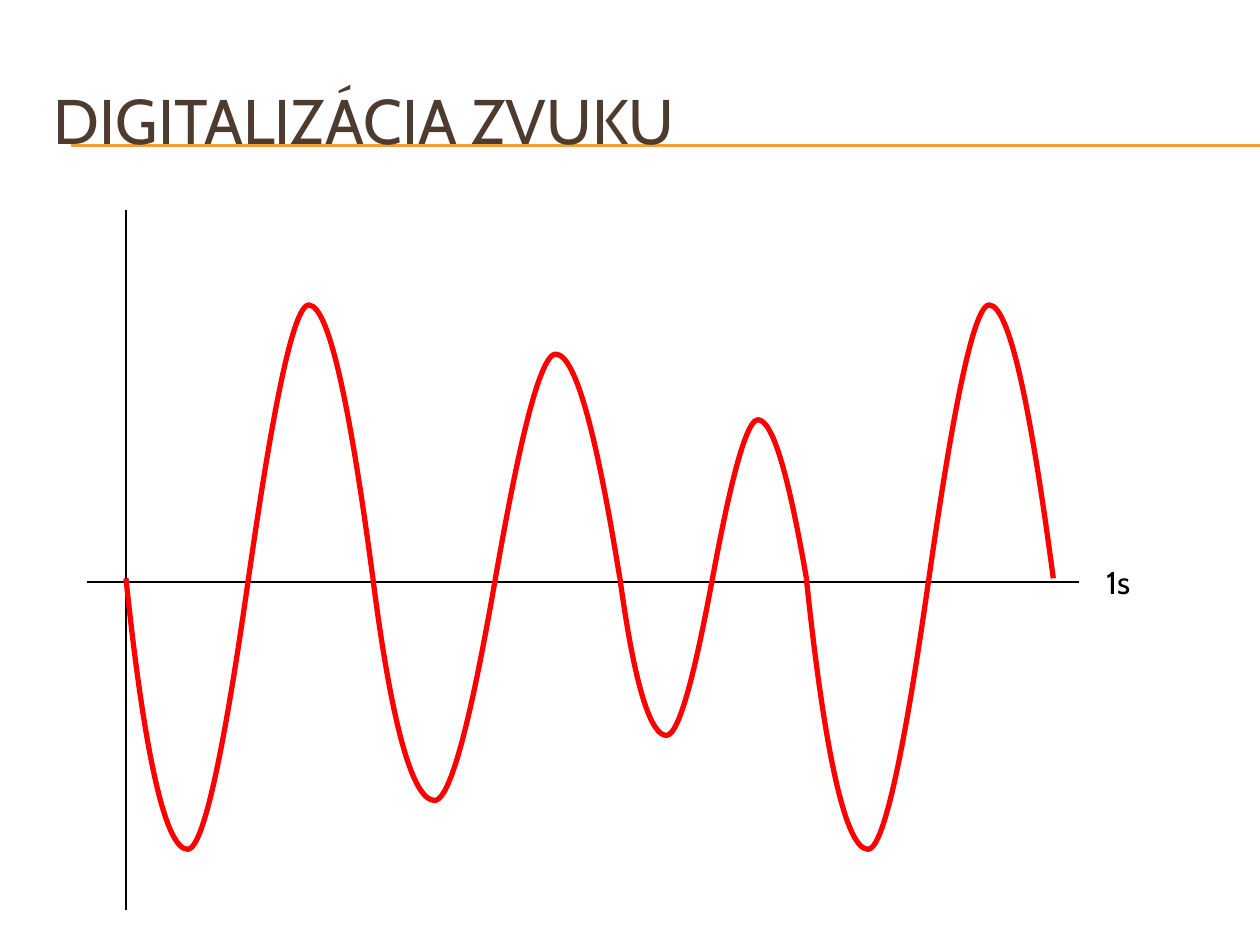
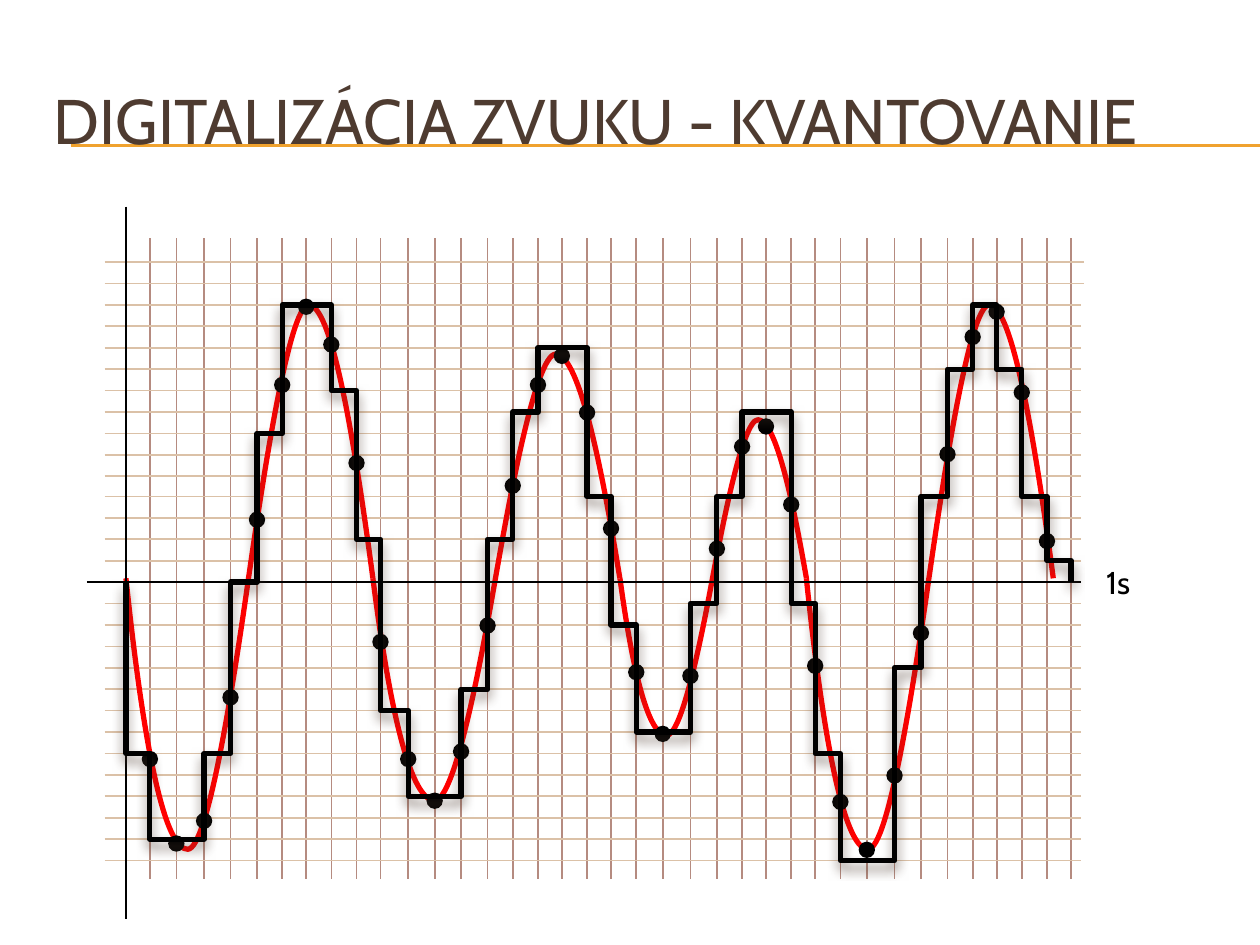
from itertools import accumulate

from lxml.etree import SubElement
from pptx import Presentation
from pptx.dml.color import RGBColor
from pptx.enum.shapes import MSO_CONNECTOR, MSO_SHAPE
from pptx.enum.text import MSO_ANCHOR, MSO_AUTO_SIZE
from pptx.oxml.ns import qn
from pptx.util import Emu, Pt

EMU_PER_PX = 9144
FONT = "Cabin"
BLACK = "000000"
BROWN = "4E3B30"
ORANGE = "F0A22E"
RED = "FF0000"
COLUMN_LINE = "B58B80"
ROW_LINE = "DBC1A7"

AXIS_Y = 462
AXIS_X = 100
WAVE_Y = 459
WAVE_WIDTH = 196
WAVE_CURVE = [
    (0, 0), (16, 153), (33, 215), (49, 215), (65, 215), (85, 86), (97, 2),
    (108, -74), (129, -216), (145, -217), (162, -217), (179, -128), (196, 0),
]
WAVES = [(196, 1), (196, 0.82), (148, 0.58), (196, 1)]

WIDE, NARROW = 21.3, 19.6
COLUMN_STEPS = (
    [WIDE] * 4 + [NARROW] * 5 + [WIDE] * 4 + [NARROW] * 6
    + [WIDE] * 3 + [NARROW] * 5 + [WIDE] * 4 + [NARROW] * 5
)
COLUMNS = [round(x) for x in accumulate(COLUMN_STEPS, initial=119)]
ROWS = [round(208 + 16.95 * index) for index in range(29)]
AXIS_ROW = 15

DOT_SIZE = 13
DOT_TOPS = [
    596, 663, 645, 547, 406, 299, 237, 267, 361, 503, 596, 629,
    590, 490, 379, 299, 276, 321, 413, 527, 576, 530, 429, 348,
    332, 394, 522, 630, 668, 609, 496, 354, 261, 241, 305, 423,
]
QUANTIZED_ROWS = [
    23, 27, 27, 23, 15, 8, 2, 2, 6, 13, 21, 25, 25, 20, 13, 7, 4, 4, 11,
    17, 22, 22, 16, 11, 7, 7, 16, 23, 28, 28, 19, 11, 5, 2, 5, 11, 14,
]


def px(length):
    return Emu(round(length * EMU_PER_PX))


def color(value):
    return RGBColor.from_string(value)


def add_line(slide, start, end, line_color, width=1):
    line = slide.shapes.add_connector(
        MSO_CONNECTOR.STRAIGHT, *(px(value) for value in start + end)
    )
    line.line.color.rgb = color(line_color)
    line.line.width = Pt(width)
    SubElement(line._element.spPr, qn("a:effectLst"))


def add_text(slide, box, text, size, text_color, wrap=True):
    shape = slide.shapes.add_textbox(*(px(value) for value in box))
    frame = shape.text_frame
    frame.word_wrap = wrap
    frame.auto_size = MSO_AUTO_SIZE.NONE if wrap else MSO_AUTO_SIZE.SHAPE_TO_FIT_TEXT
    frame.vertical_anchor = MSO_ANCHOR.MIDDLE if wrap else MSO_ANCHOR.TOP
    run = frame.paragraphs[0].add_run()
    run.text = text
    run.font.name = FONT
    run.font.size = Pt(size)
    run.font.color.rgb = color(text_color)


def add_outline(slide, points, line_color):
    start, *rest = [(px(x), px(y)) for x, y in points]
    builder = slide.shapes.build_freeform(*start)
    builder.add_line_segments(rest, close=False)
    shape = builder.convert_to_shape()
    shape.shadow.inherit = False
    shape.fill.background()
    shape.line.color.rgb = color(line_color)
    shape.line.width = Pt(3)
    return shape


def turn_lines_into_curves(shape):
    lines = list(shape._element.iter(qn("a:lnTo")))
    outline = lines[0].getparent()
    for first in range(0, len(lines), 3):
        curve = SubElement(outline, qn("a:cubicBezTo"))
        for line in lines[first:first + 3]:
            curve.append(line[0])
            outline.remove(line)


def add_waves(slide):
    left = AXIS_X
    for width, amplitude in WAVES:
        points = [
            (left + x * width / WAVE_WIDTH, WAVE_Y + y * amplitude)
            for x, y in WAVE_CURVE
        ]
        turn_lines_into_curves(add_outline(slide, points, RED))
        left += width


def add_axes(slide, right, top, bottom):
    add_line(slide, (69, AXIS_Y), (right, AXIS_Y), BLACK)
    add_line(slide, (AXIS_X, top), (AXIS_X, bottom), BLACK)


def add_time_label(slide):
    add_text(slide, (868, 442, 43, 40), "1s", 18, BLACK, wrap=False)


def add_grid(slide):
    for x in COLUMNS:
        add_line(slide, (x, 189), (x, 698), COLUMN_LINE)
    for index, y in enumerate(ROWS):
        if index != AXIS_ROW:
            add_line(slide, (83, y), (860 if index < 2 else 858, y), ROW_LINE)


def add_sample_dots(slide):
    for x, top in zip(COLUMNS, DOT_TOPS):
        dot = slide.shapes.add_shape(
            MSO_SHAPE.OVAL, px(x - DOT_SIZE / 2), px(top), px(DOT_SIZE), px(DOT_SIZE)
        )
        dot.shadow.inherit = False
        dot.fill.solid()
        dot.fill.fore_color.rgb = color(BLACK)
        dot.line.fill.background()


def add_shadow(shape):
    effects = shape._element.spPr.find(qn("a:effectLst"))
    shadow = SubElement(
        effects, qn("a:outerShdw"), blurRad=str(Pt(6)), dist=str(Pt(4)),
        dir="5400000", rotWithShape="0",
    )
    shadow_color = SubElement(shadow, qn("a:srgbClr"), val=BROWN)
    SubElement(shadow_color, qn("a:alpha"), val="60000")


def add_quantized_steps(slide):
    points = [(AXIS_X, AXIS_Y)]
    for x, row in zip(COLUMNS, QUANTIZED_ROWS):
        last_x, last_y = points[-1]
        if last_y == ROWS[row]:
            points.pop()
        else:
            points.append((last_x, ROWS[row]))
        points.append((x, ROWS[row]))
    points.append((COLUMNS[-1], AXIS_Y))
    add_shadow(add_outline(slide, points, BLACK))


def add_slide(presentation):
    slide = presentation.slides.add_slide(presentation.slide_layouts[6])
    for y in (115, 116):
        add_line(slide, (56, y), (1000, y), ORANGE, 0.75)
    return slide


def add_title(slide, text):
    add_text(slide, (33, 49, 950, 92), text, 36, BROWN)


def add_wave_slide(presentation):
    slide = add_slide(presentation)
    add_axes(slide, 856, 167, 722)
    add_title(slide, "DIGITALIZÁCIA ZVUKU")
    add_waves(slide)
    add_time_label(slide)


def add_quantization_slide(presentation):
    slide = add_slide(presentation)
    add_grid(slide)
    add_title(slide, "DIGITALIZÁCIA ZVUKU - KVANTOVANIE")
    add_waves(slide)
    add_sample_dots(slide)
    add_axes(slide, 858, 164, 729)
    add_time_label(slide)
    add_quantized_steps(slide)


def main():
    presentation = Presentation()
    presentation.slide_width = px(1000)
    presentation.slide_height = px(750)
    add_wave_slide(presentation)
    add_quantization_slide(presentation)
    presentation.save("out.pptx")


if __name__ == "__main__":
    main()
